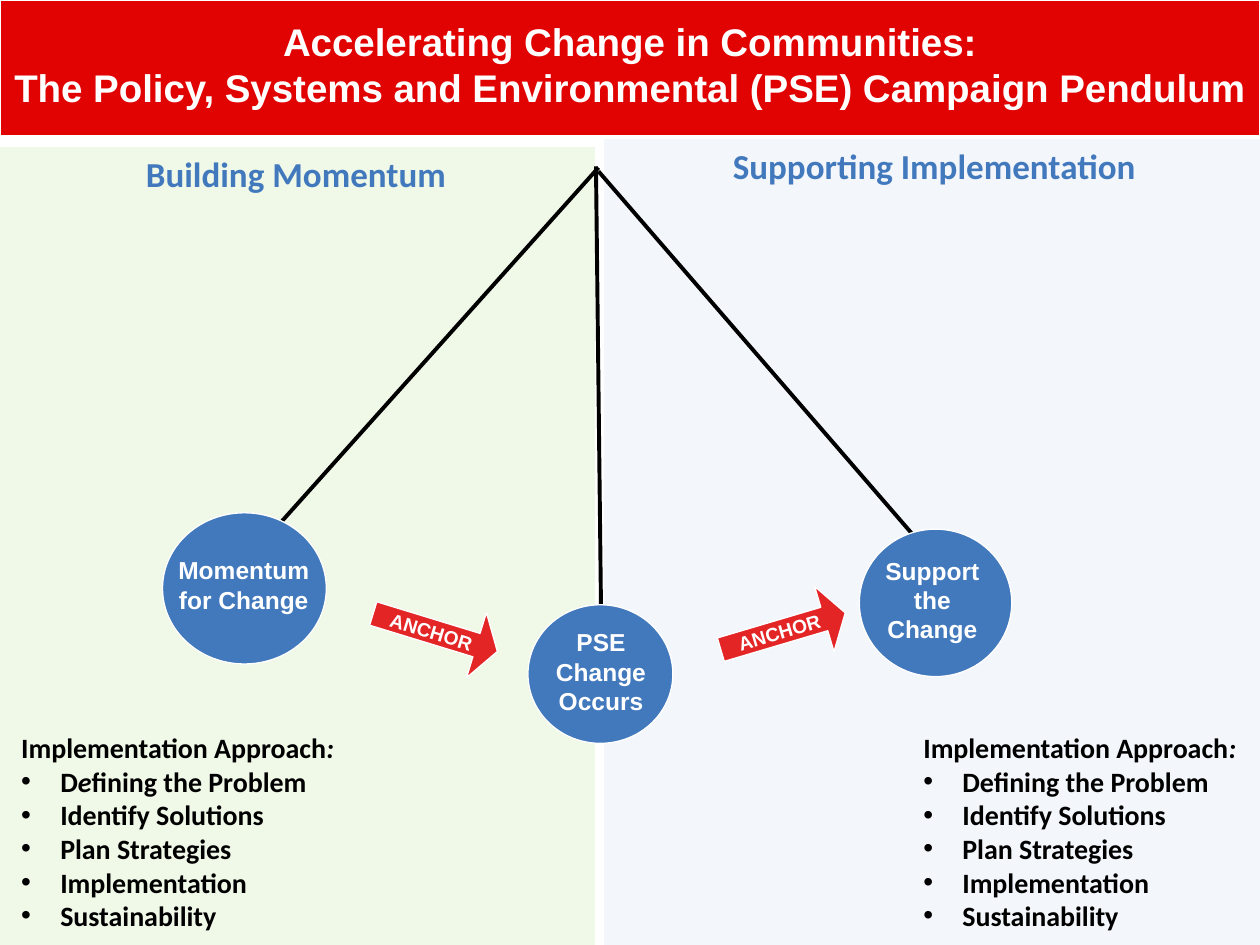
from dataclasses import dataclass

from lxml.etree import SubElement
from pptx import Presentation
from pptx.dml.color import RGBColor
from pptx.enum.shapes import MSO_CONNECTOR, MSO_SHAPE
from pptx.enum.text import MSO_ANCHOR, MSO_AUTO_SIZE, PP_ALIGN
from pptx.oxml.ns import qn
from pptx.util import Inches, Pt


@dataclass(frozen=True)
class Theme:
    banner: str = "E10202"
    arrow: str = "E32526"
    blue: str = "4279BD"
    green_panel: str = "F0F8E8"
    blue_panel: str = "F3F6FB"
    white: str = "FFFFFF"
    black: str = "000000"
    display: str = "Arial"
    body: str = "Calibri"
    title_size: float = 22
    heading_size: float = 20
    list_size: float = 16
    label_size: float = 14
    arrow_size: float = 11
    outline: float = 0.75
    rod: float = 2.25


THEME = Theme()

TITLE = [
    "Accelerating Change in Communities:",
    "The Policy, Systems and Environmental (PSE) Campaign Pendulum",
]
BANNER = (0, 0, 10, 1.08)
TITLE_BOX = (-0.25, -0.11, 10.5, 1.24)
PANELS = [
    ("Supporting Implementation", (4.79, 1.1, 5.25, 6.42), THEME.blue_panel),
    ("Building Momentum", (-0.03, 1.16, 4.76, 6.36), THEME.green_panel),
]
RODS = [
    ((4.73, 1.32), (4.77, 4.81)),
    ((4.75, 1.36), (7.32, 4.33)),
    ((4.75, 1.33), (1.93, 4.48)),
]
BOBS = [
    (["PSE", "Change Occurs"], (4.19, 4.8, 1.15, 1.1), (4.24, 4.93, 1.06, 0.81)),
    (["Momentum for Change"], (1.29, 4.07, 1.3, 1.2), (1.27, 4.36, 1.33, 0.57)),
    (["Support the Change"], (6.82, 4.2, 1.21, 1.17), (6.82, 4.36, 1.16, 0.81)),
]
ANCHORS = [((2.94, 4.75, 1.03, 0.54), 17), ((5.7, 4.74, 1.03, 0.54), 343.5)]
APPROACH_HEADING = [("Implementation Approach", False), (":", True)]
FIRST_STEPS = [
    [("D", False), ("e", True), ("fining the Problem", False)],
    "Defining the Problem",
]
LATER_STEPS = ["Identify Solutions", "Plan Strategies", "Implementation", "Sustainability"]
APPROACH_BOXES = [(0.07, 5.75, 3.48, 1.72), (7.23, 5.75, 2.7, 1.72)]
BULLET_INDENT = 0.31


def inches(values):
    return [Inches(value) for value in values]


def color(value):
    return RGBColor.from_string(value)


def add_bullet(para):
    properties = para._p.get_or_add_pPr()
    properties.set("marL", str(Inches(BULLET_INDENT)))
    properties.set("indent", str(-Inches(BULLET_INDENT)))
    SubElement(properties, qn("a:buFont"), typeface="Arial")
    SubElement(properties, qn("a:buChar"), char="•")


def write(frame, paragraphs, *, size, ink, font, align=PP_ALIGN.CENTER,
          anchor=MSO_ANCHOR.TOP, bullets_from=None, inset=None):
    frame.word_wrap = True
    frame.auto_size = MSO_AUTO_SIZE.NONE
    frame.vertical_anchor = anchor
    if inset is not None:
        frame.margin_left = frame.margin_right = Inches(inset)
        frame.margin_top = frame.margin_bottom = Inches(inset)
    for index, content in enumerate(paragraphs):
        para = frame.paragraphs[0] if index == 0 else frame.add_paragraph()
        para.alignment = align
        if bullets_from is not None and index >= bullets_from:
            add_bullet(para)
        spans = [(content, False)] if isinstance(content, str) else content
        for text, italic in spans:
            if text == "\n":
                para.add_line_break()
                continue
            span = para.add_run()
            span.text = text
            span.font.name = font
            span.font.size = Pt(size)
            span.font.bold = True
            span.font.italic = italic
            span.font.color.rgb = color(ink)


def add_filled(page, kind, place, fill):
    shape = page.shapes.add_shape(kind, *inches(place))
    shape.shadow.inherit = False
    shape.fill.solid()
    shape.fill.fore_color.rgb = color(fill)
    shape.line.color.rgb = color(THEME.white)
    shape.line.width = Pt(THEME.outline)
    return shape


def add_rod(page, start, end):
    rod = page.shapes.add_connector(MSO_CONNECTOR.STRAIGHT, *inches(start + end))
    rod.line.color.rgb = color(THEME.black)
    rod.line.width = Pt(THEME.rod)
    SubElement(rod._element.spPr, qn("a:effectLst"))


def add_text(page, place, paragraphs, **style):
    box = page.shapes.add_textbox(*inches(place))
    write(box.text_frame, paragraphs, **style)


def add_title(page):
    title = page.shapes.title
    title.left, title.top, title.width, title.height = inches(TITLE_BOX)
    first, second = TITLE
    write(title.text_frame, [[(first, False), ("\n", False), (second, False)]],
          size=THEME.title_size, ink=THEME.white, font=THEME.display,
          anchor=MSO_ANCHOR.MIDDLE)
    banner = add_filled(page, MSO_SHAPE.RECTANGLE, BANNER, THEME.banner)
    title._element.addprevious(banner._element)


def main():
    deck = Presentation()
    deck.slide_width, deck.slide_height = Inches(10), Inches(7.5)
    page = deck.slides.add_slide(deck.slide_layouts[5])
    add_title(page)

    for heading, place, fill in PANELS:
        panel = add_filled(page, MSO_SHAPE.RECTANGLE, place, fill)
        write(panel.text_frame, [heading], size=THEME.heading_size,
              ink=THEME.blue, font=THEME.body)

    for start, end in RODS:
        add_rod(page, start, end)

    for label, circle, label_box in BOBS:
        add_filled(page, MSO_SHAPE.OVAL, circle, THEME.blue)
        add_text(page, label_box, label, size=THEME.label_size,
                 ink=THEME.white, font=THEME.display)

    for place, angle in ANCHORS:
        arrow = add_filled(page, MSO_SHAPE.RIGHT_ARROW, place, THEME.arrow)
        arrow.adjustments[0], arrow.adjustments[1] = 0.36, 0.32
        arrow.rotation = angle
        write(arrow.text_frame, ["ANCHOR"], size=THEME.arrow_size, ink=THEME.white,
              font=THEME.display, anchor=MSO_ANCHOR.MIDDLE, inset=0)

    for place, first_step in zip(APPROACH_BOXES, FIRST_STEPS):
        add_text(page, place, [APPROACH_HEADING, first_step, *LATER_STEPS],
                 size=THEME.list_size, ink=THEME.black, font=THEME.body,
                 align=PP_ALIGN.LEFT, bullets_from=1)

    deck.save("out.pptx")


if __name__ == "__main__":
    main()
